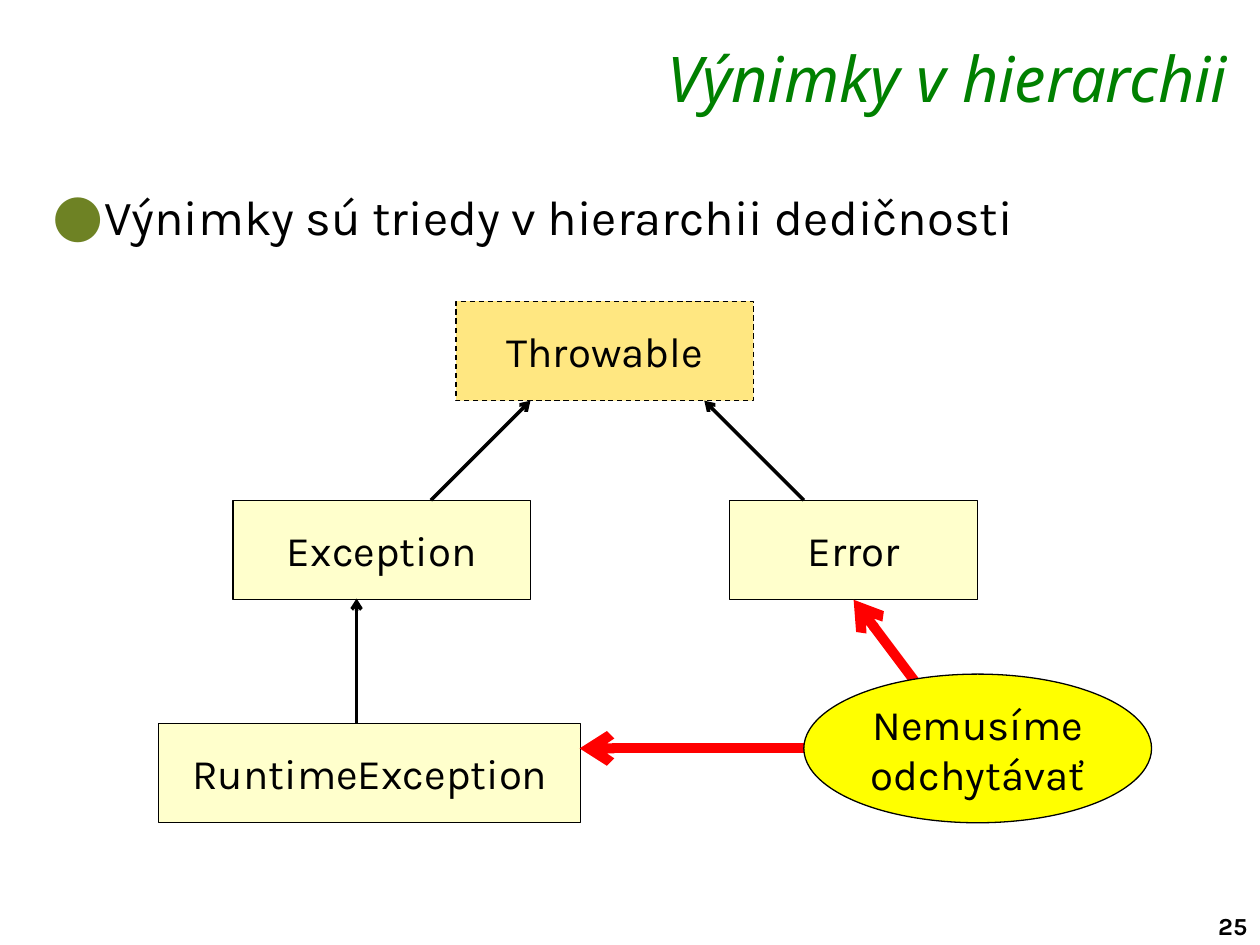
from dataclasses import dataclass
from typing import Optional

import pptx
import pptx.dml.color
import pptx.enum.dml
import pptx.enum.shapes
import pptx.enum.text
import pptx.oxml
import pptx.oxml.ns
import pptx.util
from pptx.dml.color import RGBColor
from pptx.util import Inches

BLACK = RGBColor(0x00, 0x00, 0x00)
GREEN = RGBColor(0x00, 0x80, 0x00)
ORANGE = RGBColor(0xFF, 0xE7, 0x81)
CREAM = RGBColor(0xFF, 0xFF, 0xCC)
YELLOW = RGBColor(0xFF, 0xFF, 0x00)
RED = RGBColor(0xFF, 0x00, 0x00)
BULLET_GREEN = RGBColor(0x6E, 0x82, 0x24)

RECTANGLE = pptx.enum.shapes.MSO_SHAPE.RECTANGLE
OVAL = pptx.enum.shapes.MSO_SHAPE.OVAL
ALIGN = pptx.enum.text.PP_ALIGN
ANCHOR = pptx.enum.text.MSO_ANCHOR
BOX_HEIGHT = 0.79


@dataclass
class Node:
    text: str
    left: float
    top: float
    width: float
    height: float = BOX_HEIGHT
    fill: RGBColor = CREAM
    outline: int = RECTANGLE
    dashed: bool = False


@dataclass
class Arrow:
    start: tuple[float, float]
    end: tuple[float, float]
    color: RGBColor = BLACK
    width: float = 0
    start_node: Optional[tuple[str, int]] = None
    end_node: Optional[tuple[str, int]] = None


NODES = [
    Node("Throwable", 3.62, 2.39, 2.36, fill=ORANGE, dashed=True),
    Node("Exception", 1.85, 3.97, 2.36),
    Node("Error", 5.79, 3.97, 1.97),
    Node("RuntimeException", 1.26, 5.74, 3.35),
]
NOTE = Node("Nemusíme\nodchytávať", 6.38, 5.35, 2.76, 1.18, YELLOW, OVAL)
ARROWS = [
    Arrow((3.42, 3.97), (4.21, 3.18)),
    Arrow((6.38, 3.97), (5.59, 3.18)),
    Arrow((2.83, 5.74), (2.83, 4.75)),
    Arrow((7.36, 5.54), (6.77, 4.75), RED, 5.67, end_node=("Error", 2)),
    Arrow((6.57, 5.94), (4.6, 5.94), RED, 5.67),
]


def style(paragraph, size: float, color: RGBColor = BLACK, face: str = "Karla") -> None:
    for run in paragraph.runs:
        run.font.name = face
        run.font.size = pptx.util.Pt(size)
        run.font.color.rgb = color


def place(shape, left: float, top: float, width: float, height: float) -> None:
    shape.left, shape.top = Inches(left), Inches(top)
    shape.width, shape.height = Inches(width), Inches(height)


def draw_node(slide, node: Node):
    shape = slide.shapes.add_shape(
        node.outline, Inches(node.left), Inches(node.top),
        Inches(node.width), Inches(node.height))
    shape.shadow.inherit = False
    shape.fill.solid()
    shape.fill.fore_color.rgb = node.fill
    shape.line.color.rgb = BLACK
    shape.line.width = pptx.util.Pt(0)
    if node.dashed:
        shape.line.dash_style = pptx.enum.dml.MSO_LINE.DASH
    frame = shape.text_frame
    frame.text = node.text
    frame.vertical_anchor = ANCHOR.MIDDLE
    for paragraph in frame.paragraphs:
        paragraph.alignment = ALIGN.CENTER
        style(paragraph, 24)
    return shape


def draw_arrow(slide, arrow: Arrow, shapes: dict) -> None:
    line = slide.shapes.add_connector(
        pptx.enum.shapes.MSO_CONNECTOR.STRAIGHT,
        *(Inches(value) for value in arrow.start + arrow.end))
    if arrow.start_node:
        name, side = arrow.start_node
        line.begin_connect(shapes[name], side)
    if arrow.end_node:
        name, side = arrow.end_node
        line.end_connect(shapes[name], side)
    line.line.color.rgb = arrow.color
    line.line.width = pptx.util.Pt(arrow.width)
    namespace = pptx.oxml.ns.nsdecls("a")
    line.line._get_or_add_ln().append(
        pptx.oxml.parse_xml(f'<a:tailEnd {namespace} type="arrow"/>'))
    line._element.spPr.append(pptx.oxml.parse_xml(f"<a:effectLst {namespace}/>"))


def add_bullet(paragraph) -> None:
    properties = paragraph._p.get_or_add_pPr()
    properties.set("marL", str(Inches(0.39)))
    properties.set("indent", str(-Inches(0.39)))
    namespace = pptx.oxml.ns.nsdecls("a")
    for element in (
        f'<a:buClr {namespace}><a:srgbClr val="{BULLET_GREEN}"/></a:buClr>',
        f'<a:buSzPct {namespace} val="120000"/>',
        f'<a:buFont {namespace} typeface="Karla"/>',
        f'<a:buChar {namespace} char="●"/>',
    ):
        properties.append(pptx.oxml.parse_xml(element))


def main() -> None:
    presentation = pptx.Presentation()
    presentation.slide_width, presentation.slide_height = Inches(10), Inches(7.5)
    slide = presentation.slides.add_slide(presentation.slide_layouts[1])

    # Title
    title = slide.shapes.title
    place(title, 1.59, 0.31, 8.25, 0.58)
    heading = title.text_frame
    heading.text = "Výnimky v hierarchii"
    heading.auto_size = pptx.enum.text.MSO_AUTO_SIZE.NONE
    heading.vertical_anchor = ANCHOR.TOP
    heading.margin_top = heading.margin_bottom = 0
    heading.paragraphs[0].alignment = ALIGN.RIGHT
    style(heading.paragraphs[0], 36, GREEN, "Noto Sans")
    heading.paragraphs[0].runs[0].font.italic = True

    # Bulleted statement
    body = slide.placeholders[1]
    place(body, 0.32, 1.4, 9.38, 5.8)
    statement = body.text_frame
    statement.text = "Výnimky sú triedy v hierarchii dedičnosti"
    statement.auto_size = pptx.enum.text.MSO_AUTO_SIZE.NONE
    statement.vertical_anchor = ANCHOR.TOP
    statement.margin_top = Inches(0.08)
    add_bullet(statement.paragraphs[0])
    statement.paragraphs[0].space_before = pptx.util.Pt(0)
    style(statement.paragraphs[0], 28)

    # Class hierarchy, arrows, and the note over the arrow starts
    shapes = {node.text: draw_node(slide, node) for node in NODES}
    for arrow in ARROWS:
        draw_arrow(slide, arrow, shapes)
    draw_node(slide, NOTE)

    # Page number
    page = slide.shapes.add_textbox(
        Inches(9.57), Inches(7.18), Inches(0.51), Inches(0.33)).text_frame
    page.text = "25"
    style(page.paragraphs[0], 14)
    page.paragraphs[0].runs[0].font.bold = True

    presentation.save("out.pptx")


if __name__ == "__main__":
    main()
